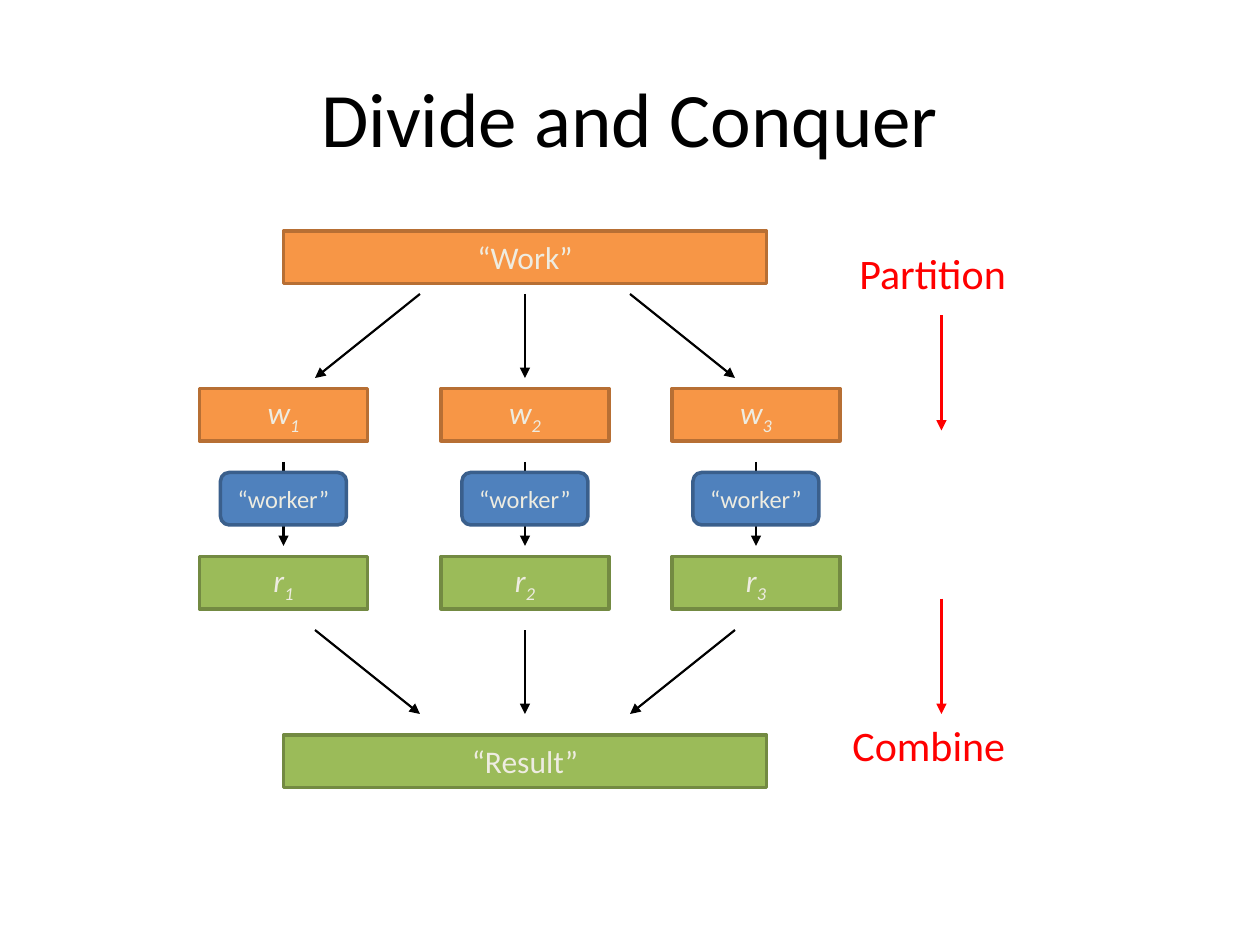
from lxml.etree import SubElement
from pptx import Presentation
from pptx.dml.color import RGBColor
from pptx.enum.shapes import MSO_CONNECTOR, MSO_SHAPE
from pptx.enum.text import MSO_ANCHOR, PP_ALIGN
from pptx.oxml.ns import qn
from pptx.util import Pt

BLACK = RGBColor(0x00, 0x00, 0x00)
RED = RGBColor(0xFF, 0x00, 0x00)
CREAM = RGBColor(0xEE, 0xEC, 0xE1)
ORANGE = RGBColor(0xF7, 0x96, 0x46)
DARK_ORANGE = RGBColor(0xB7, 0x6F, 0x34)
GREEN = RGBColor(0x9B, 0xBB, 0x59)
DARK_GREEN = RGBColor(0x73, 0x8A, 0x42)
BLUE = RGBColor(0x4F, 0x81, 0xBD)
DARK_BLUE = RGBColor(0x3A, 0x5F, 0x8C)

WORK_COLORS = (ORANGE, DARK_ORANGE)
RESULT_COLORS = (GREEN, DARK_GREEN)
WORKER_COLORS = (BLUE, DARK_BLUE)


def write(frame, text, subscript="", size=18, color=CREAM, italic=False,
          align=PP_ALIGN.CENTER, anchor=MSO_ANCHOR.MIDDLE, font="Calibri"):
    frame.word_wrap = True
    frame.vertical_anchor = anchor
    paragraph = frame.paragraphs[0]
    paragraph.alignment = align
    for part in filter(None, (text, subscript)):
        run = paragraph.add_run()
        run.text = part
        run.font.name = font
        run.font.size = Pt(size)
        run.font.italic = italic
        run.font.color.rgb = color
    if subscript:
        run.font._element.set("baseline", "-25000")


class Diagram:
    """Draws the elements of a divide-and-conquer diagram in one style."""

    box_height = 30
    border = 2

    def __init__(self, slide):
        self.slide = slide

    def label(self, text, left, top, width, height, **text_format):
        label = self.slide.shapes.add_textbox(Pt(left), Pt(top), Pt(width), Pt(height))
        write(label.text_frame, text, **text_format)

    def box(self, text, center, top, width, colors, kind=MSO_SHAPE.RECTANGLE, **text_format):
        box = self.slide.shapes.add_shape(
            kind, Pt(center - width / 2), Pt(top), Pt(width), Pt(self.box_height))
        fill, border = colors
        box.shadow.inherit = False
        box.fill.solid()
        box.fill.fore_color.rgb = fill
        box.line.color.rgb = border
        box.line.width = Pt(self.border)
        write(box.text_frame, text, **text_format)

    def arrow(self, start_x, start_y, end_x, end_y, color=BLACK, weight=1.25):
        arrow = self.slide.shapes.add_connector(
            MSO_CONNECTOR.STRAIGHT, Pt(start_x), Pt(start_y), Pt(end_x), Pt(end_y))
        arrow.line.color.rgb = color
        arrow.line.width = Pt(weight)
        SubElement(arrow.line._get_or_add_ln(), qn("a:tailEnd"), type="triangle")
        SubElement(arrow._element.spPr, qn("a:effectLst"))


def main():
    presentation = Presentation()
    presentation.slide_width, presentation.slide_height = Pt(720), Pt(540)
    diagram = Diagram(presentation.slides.add_slide(presentation.slide_layouts[6]))

    diagram.label("Divide and Conquer", 36, 21.6, 648, 90, size=44, color=BLACK)

    middle = 300
    diagram.box("“Work”", middle, 132, 276, WORK_COLORS)
    diagram.box("“Result”", middle, 420, 276, RESULT_COLORS)

    for number, center in enumerate((162, middle, 432), start=1):
        diagram.box("w", center, 222, 96, WORK_COLORS, subscript=str(number), italic=True)
        diagram.arrow(center, 264, center, 312)
        diagram.box("“worker”", center, 270, 72, WORKER_COLORS,
                    kind=MSO_SHAPE.ROUNDED_RECTANGLE, size=14)
        diagram.box("r", center, 318, 96, RESULT_COLORS, subscript=str(number), italic=True)

    for side in (-1, 0, 1):
        inner, outer = middle + 60 * side, middle + 120 * side
        diagram.arrow(inner, 168, outer, 216)
        diagram.arrow(outer, 360, inner, 408)

    for phase, left, top, width, arrow_top in (
            ("Partition", 484, 138, 113, 180), ("Combine", 480, 407.5, 118, 342)):
        diagram.label(phase, left, top, width, 36.5, size=24, color=RED,
                      align=PP_ALIGN.LEFT, anchor=MSO_ANCHOR.TOP)
        diagram.arrow(538, arrow_top, 538, arrow_top + 66, color=RED, weight=1.5)

    presentation.save("out.pptx")


if __name__ == "__main__":
    main()
